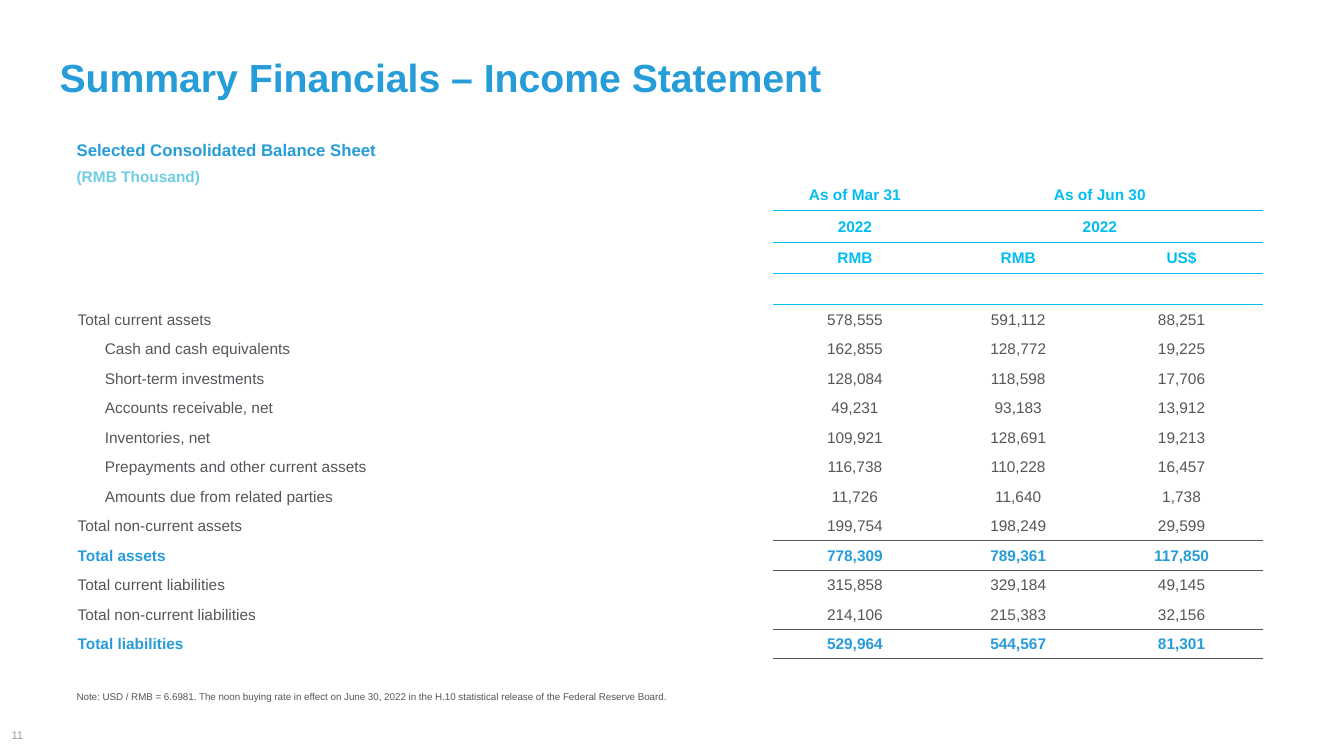
"""Build the balance sheet summary slide."""
from lxml import etree
from pptx import Presentation
from pptx.dml.color import RGBColor
from pptx.enum import text
from pptx.oxml.ns import qn
from pptx.util import Inches, Pt

BLUE = RGBColor(0x26, 0x9D, 0xD8)
LIGHT_BLUE = RGBColor(0x6D, 0xCE, 0xE5)
CYAN = RGBColor(0x00, 0xBD, 0xF2)
DARK_GRAY = RGBColor(0x53, 0x56, 0x5A)
PAGE_GRAY = RGBColor(0x99, 0x9A, 0x9B)
NO_STYLE = "{2D5ABB26-0587-4C30-8999-92F81FD0307C}"
LEFT, CENTER, RIGHT = text.PP_ALIGN.LEFT, text.PP_ALIGN.CENTER, text.PP_ALIGN.RIGHT


def write(tf, words, size, color, bold=False, align=LEFT):
    p = tf.paragraphs[0]
    p.alignment = align
    r = p.add_run()
    r.text = words
    r.font.name = "Arial"
    r.font.size = Pt(size)
    r.font.bold = bold
    r.font.color.rgb = color


def add_border(cell, tag, color, width):
    tcPr = cell._tc.get_or_add_tcPr()
    ln = etree.Element(qn(tag), w=str(Pt(width)))
    fill = etree.SubElement(ln, qn("a:solidFill"))
    etree.SubElement(fill, qn("a:srgbClr"), val=str(color))
    tcPr.insert(1 if tcPr.find(qn("a:lnT")) is not None else 0, ln)


prs = Presentation()
prs.slide_width, prs.slide_height = Inches(13.33), Inches(7.5)
s = prs.slides.add_slide(prs.slide_layouts[5])

title = s.shapes.title
title.left, title.top = Inches(0.59), Inches(0.53)
title.width, title.height = Inches(10.5), Inches(0.47)
tf = title.text_frame
tf.margin_left = tf.margin_top = tf.margin_right = tf.margin_bottom = 0
tf.vertical_anchor = text.MSO_ANCHOR.TOP
tf.auto_size = text.MSO_AUTO_SIZE.NONE
write(tf, "Summary Financials – Income Statement", 28, BLUE, True)

labels = [
    (0.76, 1.39, 3.4, 0.2, "Selected Consolidated Balance Sheet", 12, BLUE, True, LEFT),
    (0.76, 1.65, 1.38, 0.19, "(RMB Thousand)", 11, LIGHT_BLUE, True, LEFT),
    (0.76, 6.85, 9.17, 0.12,
     "Note: USD / RMB = 6.6981. The noon buying rate in effect on June 30, 2022 "
     "in the H.10 statistical release of the Federal Reserve Board.",
     7, DARK_GRAY, False, LEFT),
    (0, 7.21, 0.23, 0.16, "11", 8, PAGE_GRAY, False, RIGHT),
]
for left, top, width, height, words, size, color, bold, align in labels:
    sp = s.shapes.add_textbox(Inches(left), Inches(top), Inches(width), Inches(height))
    tf = sp.text_frame
    tf.word_wrap = True
    tf.margin_left = tf.margin_top = tf.margin_right = tf.margin_bottom = 0
    tf.vertical_anchor = text.MSO_ANCHOR.MIDDLE
    write(tf, words, size, color, bold, align)

rows = [
    ("", "As of Mar 31", "As of Jun 30", ""),
    ("", "2022", "2022", ""),
    ("", "RMB", "RMB", "US$"),
    ("", "", "", ""),
    ("Total current assets", "578,555", "591,112", "88,251"),
    ("Cash and cash equivalents", "162,855", "128,772", "19,225"),
    ("Short-term investments", "128,084", "118,598", "17,706"),
    ("Accounts receivable, net", "49,231", "93,183", "13,912"),
    ("Inventories, net", "109,921", "128,691", "19,213"),
    ("Prepayments and other current assets", "116,738", "110,228", "16,457"),
    ("Amounts due from related parties", "11,726", "11,640", "1,738"),
    ("Total non-current assets", "199,754", "198,249", "29,599"),
    ("Total assets", "778,309", "789,361", "117,850"),
    ("Total current liabilities", "315,858", "329,184", "49,145"),
    ("Total non-current liabilities", "214,106", "215,383", "32,156"),
    ("Total liabilities", "529,964", "544,567", "81,301"),
]
HEADER_ROWS = 3
sums = ("Total assets", "Total liabilities")
rules = {row: (CYAN, 0.5) for row in range(HEADER_ROWS)}
rules.update({row: (DARK_GRAY, 1) for row in (11, 14, 15)})

frame = s.shapes.add_table(len(rows), 4, Inches(0.76), Inches(1.78),
                           Inches(11.76), Inches(4.69))
table = frame.table
table.first_row = table.horz_banding = False
table._tbl.tblPr.find(qn("a:tableStyleId")).text = NO_STYLE
for column, width in zip(table.columns, (6.91, 1.62, 1.62, 1.62)):
    column.width = Inches(width)
for row in (0, 1):
    table.cell(row, 2).merge(table.cell(row, 3))

for i, values in enumerate(rows):
    is_header, is_sum = i < HEADER_ROWS, values[0] in sums
    color = CYAN if is_header else BLUE if is_sum else DARK_GRAY
    for j, value in enumerate(values):
        cell = table.cell(i, j)
        cell.fill.background()
        cell.vertical_anchor = text.MSO_ANCHOR.MIDDLE
        is_detail = j == 0 and 5 <= i <= 10
        cell.margin_left = Inches(0.28 if is_detail else 0.01)
        cell.margin_top = cell.margin_right = Inches(0.01)
        cell.margin_bottom = 0
        if not cell.is_spanned:
            write(cell.text_frame, value, 11, color, is_header or is_sum,
                  CENTER if j else LEFT)
        if j and i - 1 in rules:
            add_border(cell, "a:lnT", *rules[i - 1])
        if j and i in rules:
            add_border(cell, "a:lnB", *rules[i])

prs.save("out.pptx")
